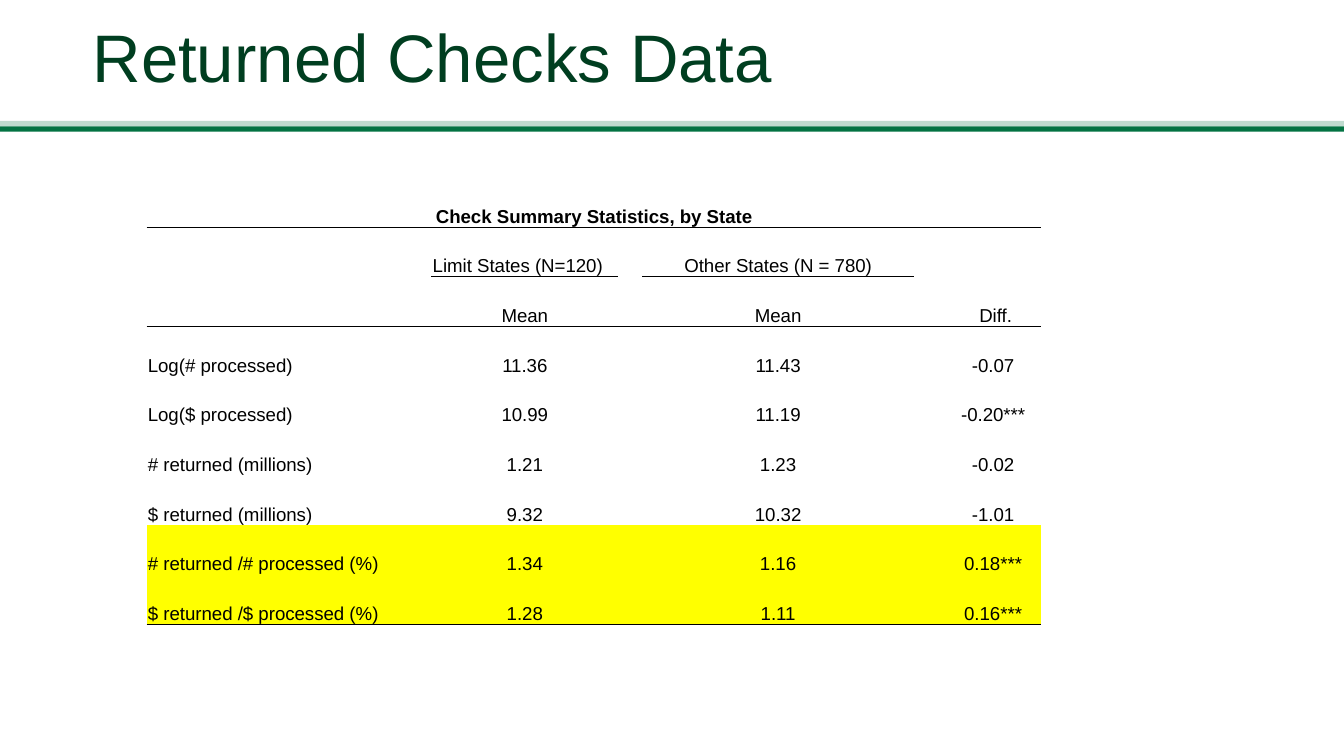
from lxml import etree
from pptx import Presentation
from pptx import util as u
from pptx.dml.color import RGBColor
from pptx.enum import shapes, text
from pptx.oxml.ns import qn

GREEN = RGBColor(0x03, 0x73, 0x43)
DARK_GREEN = RGBColor(0x00, 0x3E, 0x20)
BLACK = RGBColor(0x00, 0x00, 0x00)
WHITE = RGBColor(0xFF, 0xFF, 0xFF)
YELLOW = RGBColor(0xFF, 0xFF, 0x00)
NO_GRID_STYLE = "{2D5ABB26-0587-4C30-8999-92F81FD0307C}"

prs = Presentation()
prs.slide_width = u.Inches(10)
prs.slide_height = prs.slide_width * 9 // 16
W = prs.slide_width
s = prs.slides.add_slide(prs.slide_layouts[6])


def add_run(p, words, size, color, bold=False):
    r = p.add_run()
    r.text = words
    r.font.name = "Arial"
    r.font.size = u.Pt(size)
    r.font.bold = bold
    r.font.color.rgb = color


def set_borders(cell, ruled_sides):
    tc_pr = cell._tc.get_or_add_tcPr()
    for i, side in enumerate(("lnL", "lnR", "lnT", "lnB")):
        ln = etree.Element(qn(f"a:{side}"), w=str(u.Pt(0.5)))
        if side in ruled_sides:
            fill = etree.SubElement(ln, qn("a:solidFill"))
            etree.SubElement(fill, qn("a:srgbClr"), val=str(BLACK))
        else:
            etree.SubElement(ln, qn("a:noFill"))
        tc_pr.insert(i, ln)


band = int(W * 0.004)
for i, alpha in enumerate((25, 100)):
    sp = s.shapes.add_shape(shapes.MSO_SHAPE.RECTANGLE, 0, int(W * 0.09) + i * band, W, band)
    sp.shadow.inherit = False
    sp.line.fill.background()
    sp.fill.solid()
    sp.fill.fore_color.rgb = GREEN
    if alpha < 100:
        color = sp._element.spPr.find(f".//{qn('a:srgbClr')}")
        etree.SubElement(color, qn("a:alpha"), val=str(alpha * 1000))

title = s.shapes.add_textbox(int(W * 0.05), int(W * 0.012), int(W * 0.9), int(W * 0.069))
tf = title.text_frame
tf.word_wrap = True
tf.vertical_anchor = text.MSO_ANCHOR.BOTTOM
tf.margin_left = tf.margin_right = tf.margin_top = u.Inches(0.05)
tf.margin_bottom = u.Inches(0.1)
add_run(tf.paragraphs[0], " Returned Checks Data", 36, DARK_GREEN)

rows = [
    ("Check Summary Statistics, by State", "", "", ""),
    ("", "Limit States (N=120)", "Other States (N = 780)", ""),
    ("", "Mean", "Mean", " Diff."),
    ("Log(# processed)", "11.36", "11.43", "-0.07"),
    ("Log($ processed)", "10.99", "11.19", "-0.20***"),
    ("# returned (millions)", "1.21", "1.23", "-0.02"),
    ("$ returned (millions)", "9.32", "10.32", "-1.01"),
    ("# returned /# processed (%)", "1.34", "1.16", "0.18***"),
    ("$ returned /$ processed (%)", "1.28", "1.11", "0.16***"),
]
col_shares = (0.212, 0.139, 0.018, 0.202, 0.023, 0.072)
text_cols = (0, 1, 3, 5)
all_cols = range(len(col_shares))
ruled_below = {0: all_cols, 1: (1, 3), 2: all_cols, 8: all_cols}
row_height = int(W * 0.037)

frame = s.shapes.add_table(len(rows), len(col_shares), int(W * 0.109), int(W * 0.131),
                           int(W * sum(col_shares)), row_height * len(rows))
table = frame.table
table.first_row = table.horz_banding = False
table._tbl.tblPr.find(qn("a:tableStyleId")).text = NO_GRID_STYLE
for column, share in zip(table.columns, col_shares):
    column.width = int(W * share)
for row in table.rows:
    row.height = row_height
table.rows[0].height = int(W * 0.038)
table.cell(0, 0).merge(table.cell(0, len(col_shares) - 1))

for i, words in enumerate(rows):
    for j in all_cols:
        cell = table.cell(i, j)
        cell.margin_left = cell.margin_right = cell.margin_top = u.Inches(0.01)
        cell.margin_bottom = 0
        cell.vertical_anchor = text.MSO_ANCHOR.BOTTOM
        cell.fill.solid()
        cell.fill.fore_color.rgb = YELLOW if i >= 7 else WHITE
        edges = (("lnT", i - 1), ("lnB", i))
        set_borders(cell, [side for side, k in edges if j in ruled_below.get(k, ())])
    for j, value in zip(text_cols, words):
        if value:
            p = table.cell(i, j).text_frame.paragraphs[0]
            left = (j == 0 and i > 0) or (i, j) == (1, 1)
            p.alignment = text.PP_ALIGN.LEFT if left else text.PP_ALIGN.CENTER
            add_run(p, value, 10, BLACK, bold=i == 0)

prs.save("out.pptx")
